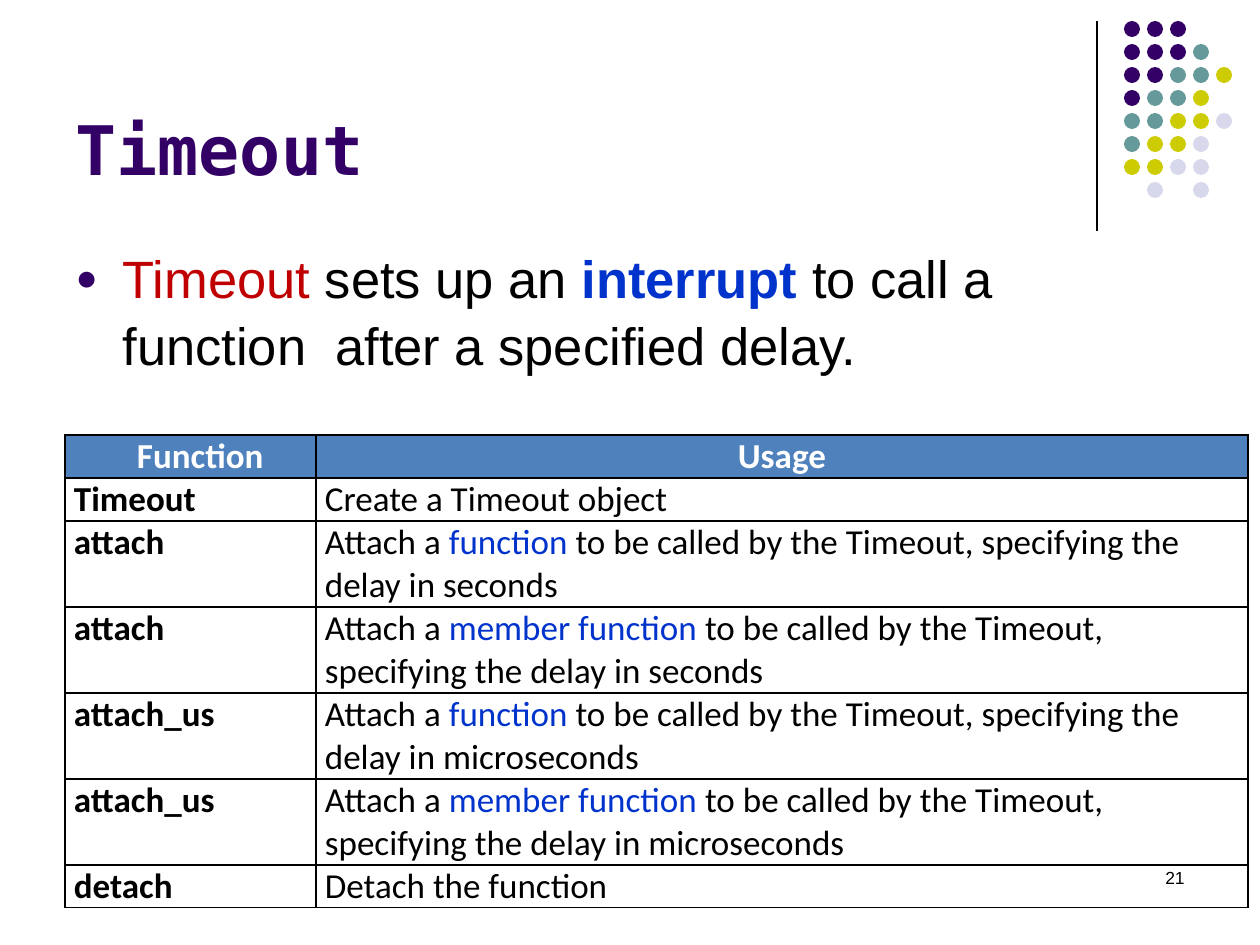
import pptx
import pptx.dml.color
import pptx.enum.shapes
import pptx.enum.text
import pptx.oxml
import pptx.oxml.ns
import pptx.util

SCALE = 914400 / 126
PURPLE, TEAL, LIME, MIST = "330066", "669999", "CCCC00", "D8D8EC"
BLACK, WHITE, RED, BLUE, HEADER = "000000", "FFFFFF", "C00000", "0033CC", "4F81BC"
DOT_COLOURS = {"P": PURPLE, "T": TEAL, "L": LIME, "M": MIST}
DOT_ROWS = ["PPP", "PPPT", "PPTTL", "PTTL", "TTLLM", "TLLM", "LLMM", " M M"]
ALIGN = pptx.enum.text.PP_ALIGN
ANCHOR = pptx.enum.text.MSO_ANCHOR


def attach_row(name, target, unit):
    """Return the table row for one of the attach functions."""
    usage = [("Attach a ", BLACK), (target, BLUE),
             (f" to be called by the Timeout, specifying the delay in {unit}", BLACK)]
    return name, usage, 2


FUNCTIONS = [
    ("Timeout", [("Create a Timeout object", BLACK)], 1),
    attach_row("attach", "function", "seconds"),
    attach_row("attach", "member function", "seconds"),
    attach_row("attach_us", "function", "microseconds"),
    attach_row("attach_us", "member function", "microseconds"),
    ("detach", [("Detach the function", BLACK)], 1),
]


def px(length):
    """Turn pixels into EMU."""
    return pptx.util.Emu(round(length * SCALE))


def colour(code):
    """Turn a hex string into a colour."""
    return pptx.dml.color.RGBColor.from_string(code)


def add_xml(parent, xml):
    """Append an element in the drawing namespace to a parent."""
    namespace = pptx.oxml.ns.nsdecls("a")
    parent.append(pptx.oxml.parse_xml(xml.replace(">", f" {namespace}>", 1)
                                      if "/>" not in xml.split(">")[0] + ">"
                                      else xml.replace("/>", f" {namespace}/>", 1)))


def place(box, left, top, width, height):
    """Move and size a box."""
    box.left, box.top, box.width, box.height = map(px, (left, top, width, height))


def write(para, text, *, size, font="Arial", hue=BLACK, bold=False):
    """Add one formatted span of text to a paragraph."""
    span = para.add_run()
    span.text = text
    span.font.size = pptx.util.Pt(size)
    span.font.name = font
    span.font.bold = bold
    span.font.color.rgb = colour(hue)


def add_dots(page):
    """Draw the corner grid of dots and the line beside it."""
    line = page.shapes.add_connector(pptx.enum.shapes.MSO_CONNECTOR.STRAIGHT,
                                     px(1097), px(21), px(1097), px(231))
    line.line.color.rgb = colour(BLACK)
    line.line.width = pptx.util.Pt(0.75)
    add_xml(line._element.spPr, "<a:effectLst/>")
    for row, pattern in enumerate(DOT_ROWS):
        for column, key in enumerate(pattern):
            if key == " ":
                continue
            dot = page.shapes.add_shape(pptx.enum.shapes.MSO_SHAPE.OVAL, px(1124 + 23 * column),
                                        px(21 + 23 * row), px(16), px(16))
            dot.shadow.inherit = False
            dot.fill.solid()
            dot.fill.fore_color.rgb = colour(DOT_COLOURS[key])
            dot.line.fill.background()


def fill_title(box):
    """Place and write the slide title."""
    place(box, 63, 16, 1040, 179)
    box.text_frame.auto_size = pptx.enum.text.MSO_AUTO_SIZE.NONE
    box.text_frame.vertical_anchor = ANCHOR.BOTTOM
    para = box.text_frame.paragraphs[0]
    para.alignment = ALIGN.LEFT
    write(para, "Timeout", size=39, font="DejaVu Sans Mono", hue=PURPLE, bold=True)


def fill_body(box):
    """Place and write the bulleted sentence."""
    place(box, 63, 237, 1134, 161)
    box.text_frame.auto_size = pptx.enum.text.MSO_AUTO_SIZE.NONE
    para = box.text_frame.paragraphs[0]
    para.space_before = pptx.util.Pt(2)
    para.line_spacing = 1.05
    settings = para._p.get_or_add_pPr()
    settings.set("marL", str(px(47)))
    settings.set("indent", str(px(-47)))
    add_xml(settings, f'<a:buClr><a:srgbClr val="{PURPLE}"/></a:buClr>')
    add_xml(settings, '<a:buSzPct val="70000"/>')
    add_xml(settings, '<a:buFont typeface="Arial"/>')
    add_xml(settings, '<a:buChar char="●"/>')
    write(para, "Timeout", size=30, hue=RED)
    write(para, " sets up an ", size=30)
    write(para, "interrupt", size=30, hue=BLUE, bold=True)
    write(para, " to call a function  after a specified delay.", size=30)


def add_number(page):
    """Write the slide number."""
    box = page.shapes.add_textbox(px(903), px(861), px(294), px(63))
    box.text_frame.word_wrap = True
    para = box.text_frame.paragraphs[0]
    para.alignment = ALIGN.RIGHT
    write(para, "21", size=10)


def fill_cell(cell, spans, *, bold=False, fill=None, inset=9, align=ALIGN.LEFT):
    """Write coloured spans into a cell with black borders."""
    cell.margin_left = px(inset)
    cell.margin_right = cell.margin_top = cell.margin_bottom = 0
    para = cell.text_frame.paragraphs[0]
    para.alignment = align
    for text, hue in spans:
        write(para, text, size=20, font="Calibri", hue=hue, bold=bold)
    settings = cell._tc.get_or_add_tcPr()
    for side in ("lnL", "lnR", "lnT", "lnB"):
        add_xml(settings, f'<a:{side} w="12700"><a:solidFill><a:srgbClr val="{BLACK}"/>'
                          f'</a:solidFill></a:{side}>')
    if fill:
        cell.fill.solid()
        cell.fill.fore_color.rgb = colour(fill)
    else:
        cell.fill.background()


def add_functions(page):
    """Add the table of functions and their usage."""
    line_height = 43
    lines = 1 + sum(count for _, _, count in FUNCTIONS)
    table = page.shapes.add_table(len(FUNCTIONS) + 1, 2, px(65), px(435),
                                  px(1183), px(line_height * lines)).table
    table.first_row = table.horz_banding = False
    table.columns[0].width, table.columns[1].width = px(251), px(932)
    table.rows[0].height = px(line_height)
    fill_cell(table.cell(0, 0), [("Function", WHITE)], bold=True, fill=HEADER, inset=72)
    fill_cell(table.cell(0, 1), [("Usage", WHITE)], bold=True, fill=HEADER, inset=0,
              align=ALIGN.CENTER)
    for row, (name, usage, count) in enumerate(FUNCTIONS, start=1):
        table.rows[row].height = px(line_height * count)
        fill_cell(table.cell(row, 0), [(name, BLACK)], bold=True)
        fill_cell(table.cell(row, 1), usage)


def main():
    """Build the slide and save the deck."""
    deck = pptx.Presentation()
    deck.slide_width, deck.slide_height = px(1260), px(945)
    page = deck.slides.add_slide(deck.slide_layouts[1])
    add_dots(page)
    fill_title(page.shapes.title)
    fill_body(page.placeholders[1])
    add_number(page)
    add_functions(page)
    deck.save("out.pptx")


if __name__ == "__main__":
    main()
